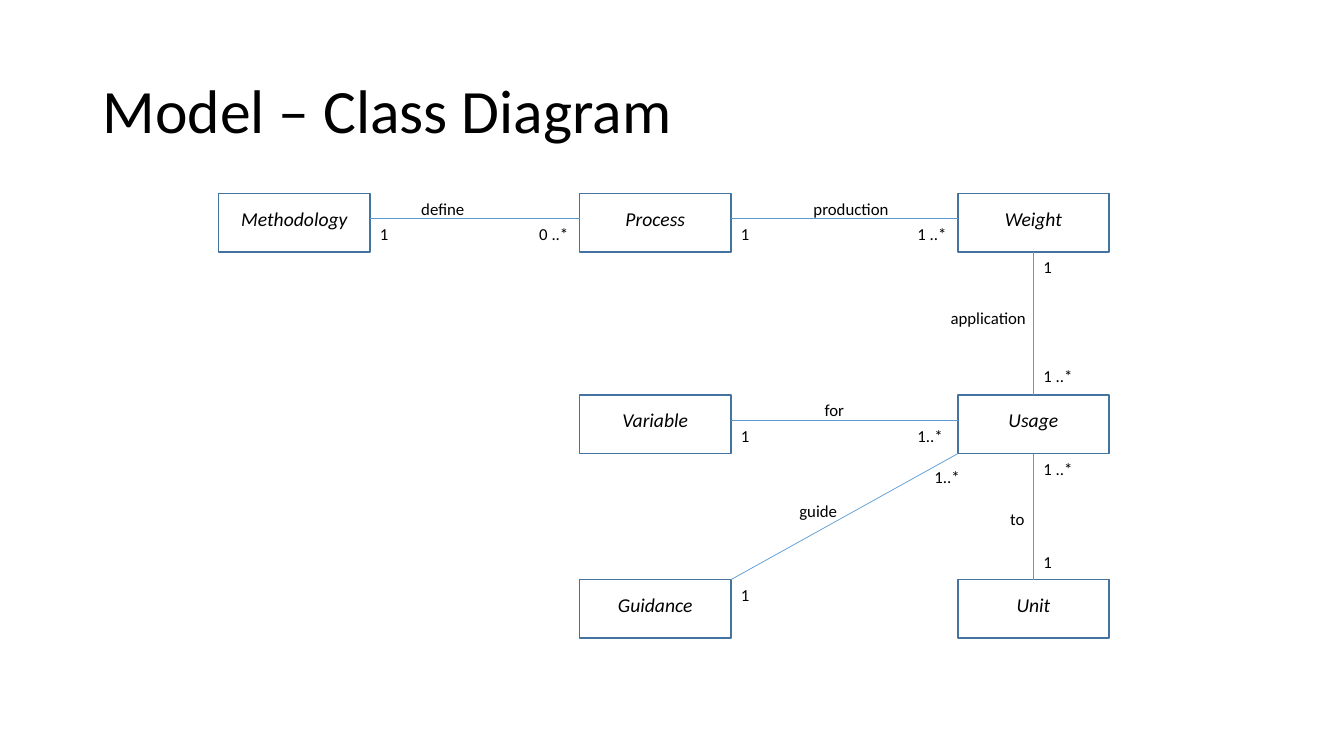
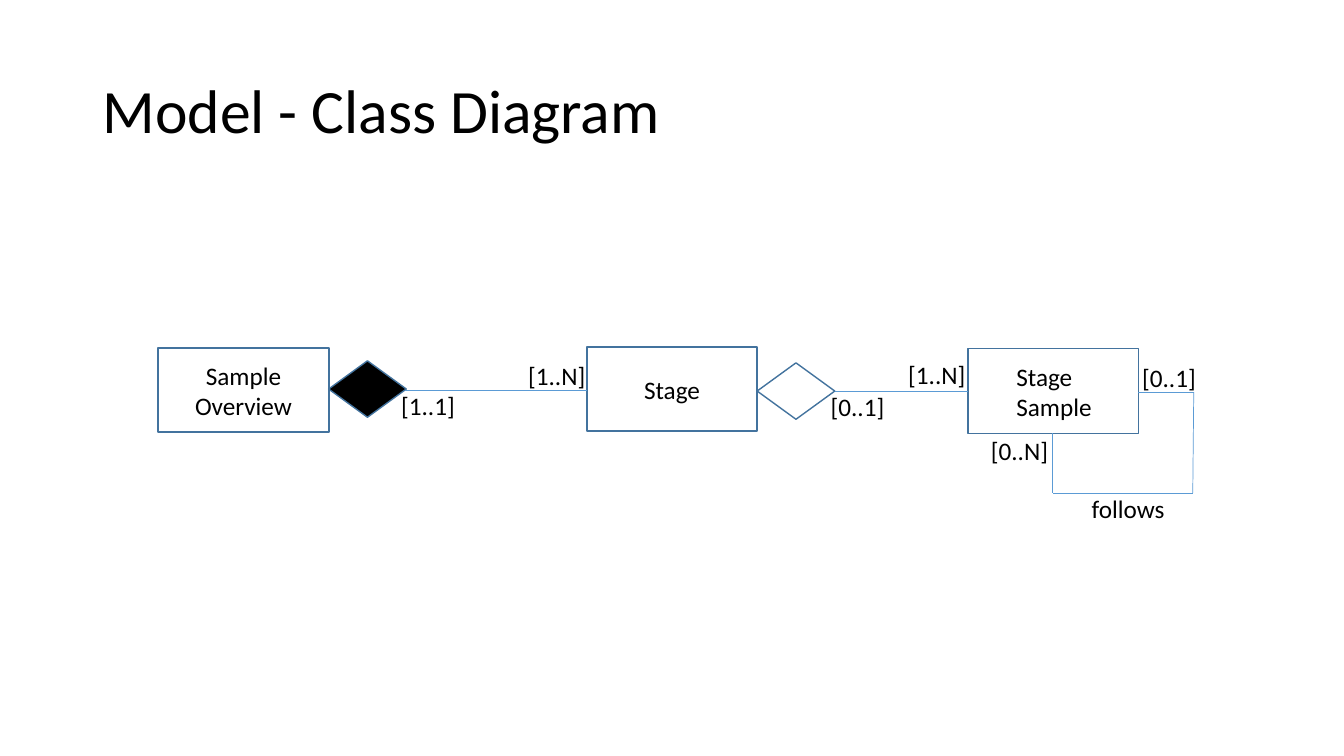
from lxml import etree
from pptx import Presentation
from pptx.dml.color import RGBColor
from pptx.enum import shapes, text
from pptx.oxml import ns
from pptx import util as u

PX = 9144  # EMU per px, 100 px to the inch
FONT = "Calibri"
BLACK, OUTLINE, LINK = "000000", "43739E", "5B9BD5"
RECTANGLE, DIAMOND = shapes.MSO_SHAPE.RECTANGLE, shapes.MSO_SHAPE.DIAMOND
LEFT, CENTER = text.PP_ALIGN.LEFT, text.PP_ALIGN.CENTER
TOP, MIDDLE = text.MSO_ANCHOR.TOP, text.MSO_ANCHOR.MIDDLE
color = RGBColor.from_string


def add_block(slide, words, left, top, width=100, height=30, kind=None, fill=None,
              border=1, size=12, italic=False, align=LEFT, anchor=TOP,
              inset_left=10, inset_top=5, spacing=1.0):
    """Add text in a plain text box, or in an outlined shape if kind is given."""
    place = [length * PX for length in (left, top, width, height)]
    if kind is None:
        shape = slide.shapes.add_textbox(*place)
    else:
        shape = slide.shapes.add_shape(kind, *place)
        shape.shadow.inherit = False
        shape.line.color.rgb = color(OUTLINE)
        shape.line.width = u.Pt(border)
        if fill:
            shape.fill.solid()
            shape.fill.fore_color.rgb = color(fill)
        else:
            shape.fill.background()
    if not words:
        return
    frame = shape.text_frame
    frame.word_wrap = True
    frame.vertical_anchor = anchor
    frame.margin_left, frame.margin_top = inset_left * PX, inset_top * PX
    paragraph = frame.paragraphs[0]
    paragraph.alignment = align
    paragraph.line_spacing = spacing
    run = paragraph.add_run()
    run.text = words
    run.font.name = FONT
    run.font.size = u.Pt(size)
    run.font.italic = italic
    run.font.color.rgb = color(BLACK)


def add_link(slide, *ends):
    """Draw a thin line from x1, y1 to x2, y2."""
    link = slide.shapes.add_connector(
        shapes.MSO_CONNECTOR.STRAIGHT, *[length * PX for length in ends])
    link.line.color.rgb = color(LINK)
    link.line.width = u.Pt(0.5)
    etree.SubElement(link._element.spPr, ns.qn("a:effectLst"))


presentation = Presentation()
presentation.slide_width, presentation.slide_height = u.Inches(13.33), u.Inches(7.5)

slides = []
for title in ("Model – Class Diagram", "Model - Class Diagram"):
    slide = presentation.slides.add_slide(presentation.slide_layouts[6])
    add_block(slide, title, 92, 40, 1150, 145, size=44, anchor=MIDDLE, spacing=0.9)
    slides.append(slide)
process_slide, stage_slide = slides

# Process model: classes on a grid of three columns and three rows
columns, rows = (217, 575, 950), (192, 392, 575)
class_width, class_height = 150, 58
classes = [
    ("Methodology", 0, 0), ("Process", 1, 0), ("Weight", 2, 0),
    ("Variable", 1, 1), ("Usage", 2, 1),
    ("Guidance", 1, 2), ("Unit", 2, 2),
]
for name, column, row in classes:
    add_block(process_slide, name, columns[column], rows[row], class_width, class_height,
              RECTANGLE, size=14, italic=True, align=CENTER, inset_top=13)

# Links across a row run 25 px below the top of its classes
for column, row in ((0, 0), (1, 0), (1, 1)):
    y = rows[row] + 25
    add_link(process_slide, columns[column] + class_width, y, columns[column + 1], y)
spine = columns[2] + class_width // 2
for upper, lower in zip(rows, rows[1:]):
    add_link(process_slide, spine, upper + class_height, spine, lower)
add_link(process_slide, columns[1] + class_width, rows[2],
         columns[2], rows[1] + class_height)

process_labels = [
    ("define", 408, 192), ("1", 367, 217), ("0 ..*", 525, 217),
    ("production", 797, 192), ("1", 725, 217), ("1 ..*", 900, 217),
    ("1", 1025, 250), ("application", 933, 300), ("1 ..*", 1025, 358),
    ("for", 808, 392), ("1", 725, 417), ("1..*", 900, 417),
    ("1 ..*", 1025, 450), ("to", 992, 500), ("1", 1025, 542),
    ("guide", 783, 492), ("1", 725, 575), ("1..*", 917, 458),
]
for label, left, top in process_labels:
    add_block(process_slide, label, left, top)

# Stage model: three classes, two aggregations and a link back to itself
stage_classes = [
    ("Sample Overview", 157, 345, 1.5, CENTER, 10),
    ("Stage", 582, 344, 1.5, CENTER, 10),
    ("Stage Sample", 960, 346, 1, LEFT, 48),
]
for name, left, top, border, align, inset in stage_classes:
    add_block(stage_slide, name, left, top, 169, 84, RECTANGLE, border=border, size=18,
              align=align, anchor=MIDDLE, inset_left=inset)

for left, top, fill in ((326, 358, BLACK), (751, 360, None)):
    add_block(stage_slide, "", left, top, 77, 56, DIAMOND, fill=fill)

add_link(stage_slide, 402, 387, 582, 387)
add_link(stage_slide, 828, 388, 960, 388)
loop = [(1129, 389), (1184, 389), (1183, 489), (1044, 489), (1044, 430)]
for start, end in zip(loop, loop[1:]):
    add_link(stage_slide, *start, *end)

stage_labels = [
    ("[1..1]", 388, 382), ("[1..N]", 514, 353),
    ("[0..1]", 814, 383), ("[1..N]", 891, 352),
    ("[0..1]", 1123, 355), ("[0..N]", 973, 427), ("follows", 1073, 484),
]
for label, left, top in stage_labels:
    add_block(stage_slide, label, left, top, height=40, size=18)

presentation.save("out.pptx")
